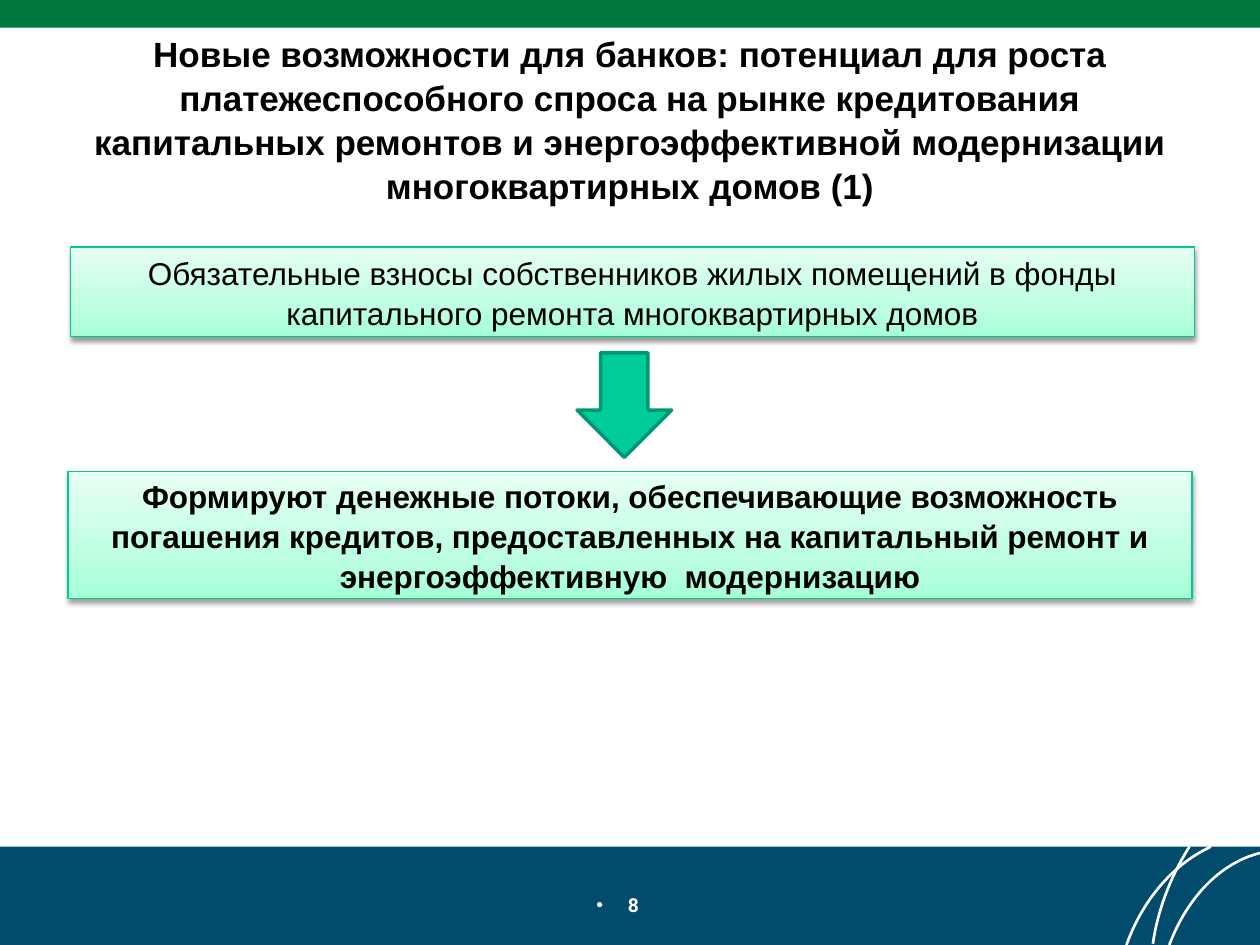
from copy import deepcopy
from dataclasses import dataclass

from lxml import etree
from pptx import Presentation, util as u
from pptx.dml.color import RGBColor
from pptx.enum import shapes, text
from pptx.oxml import ns

BLACK, WHITE = "000000", "FFFFFF"
GRADIENT = [(0, "A5FFD6"), (0.35, "BFFFE2"), (1, "E7FFF3")]
CURVE_STEPS = 24


@dataclass
class Box:
    left: float
    top: float
    height: float
    text: str
    bold: bool = False
    width: float = 8.92


@dataclass
class Arc:
    """Cubic curve given by its four control points, in inches."""
    points: list

    def at(self, t: float) -> tuple:
        weights = ((1 - t) ** 3, 3 * t * (1 - t) ** 2, 3 * t * t * (1 - t), t ** 3)
        return tuple(sum(w * p[i] for w, p in zip(weights, self.points)) for i in (0, 1))


BOXES = [
    Box(0.56, 1.96, 0.71, "Обязательные взносы собственников жилых помещений в фонды "
        "капитального ремонта многоквартирных домов"),
    Box(0.54, 3.74, 1.01, "Формируют денежные потоки, обеспечивающие возможность погашения "
        "кредитов, предоставленных на капитальный ремонт и "
        "энергоэффективную  модернизацию", bold=True),
]
ARCS = [
    Arc([(9.61, 6.72), (9.31, 6.86), (9.07, 7.14), (8.94, 7.5)]),
    Arc([(10, 6.77), (9.68, 6.85), (9.42, 7.13), (9.28, 7.5)]),
    Arc([(9.44, 6.72), (9.3, 6.94), (9.19, 7.21), (9.15, 7.49)]),
]


def rgb(value: str) -> RGBColor:
    return RGBColor.from_string(value)


def place(sp, *box: float) -> None:
    sp.left, sp.top, sp.width, sp.height = map(u.Inches, box)


def write(sp, words: str, size: float, color: str = BLACK, font: str = "Arial",
          bold: bool = False, spacing: float = 1.05, anchor=text.MSO_ANCHOR.MIDDLE):
    tf = sp.text_frame
    tf.word_wrap = True
    tf.auto_size = text.MSO_AUTO_SIZE.NONE
    tf.vertical_anchor = anchor
    p = tf.paragraphs[0]
    p.alignment = text.PP_ALIGN.CENTER
    p.line_spacing = spacing
    r = p.add_run()
    r.text = words
    r.font.name, r.font.size, r.font.bold = font, u.Pt(size), bold
    r.font.color.rgb = rgb(color)
    return p


def add_shape(slide, kind, box: tuple, fill: str = None, line: str = None, width: float = 1):
    sp = slide.shapes.add_shape(kind, *map(u.Inches, box))
    sp.shadow.inherit = False
    if fill:
        sp.fill.solid()
        sp.fill.fore_color.rgb = rgb(fill)
    if line:
        sp.line.color.rgb = rgb(line)
        sp.line.width = u.Pt(width)
    else:
        sp.line.fill.background()
    return sp


def add_arc(slide, arc: Arc) -> None:
    points = [tuple(map(u.Inches, arc.at(i / CURVE_STEPS))) for i in range(CURVE_STEPS + 1)]
    builder = slide.shapes.build_freeform(*points[0])
    builder.add_line_segments(points[1:], close=False)
    sp = builder.convert_to_shape()
    sp.shadow.inherit = False
    sp.fill.background()
    sp.line.color.rgb = rgb(WHITE)
    sp.line.width = u.Pt(1.5)


def add_box(slide, box: Box) -> None:
    sp = add_shape(slide, shapes.MSO_SHAPE.RECTANGLE,
                   (box.left, box.top, box.width, box.height), line="00C896", width=0.75)
    # Three-stop gradient, running from the bottom up
    sp.fill.gradient()
    sp.fill.gradient_angle = 90
    stops = sp._element.spPr.find(".//" + ns.qn("a:gsLst"))
    stops.append(deepcopy(stops[0]))
    for stop, (position, color) in zip(sp.fill.gradient_stops, GRADIENT):
        stop.position = position
        stop.color.rgb = rgb(color)
    # Soft shadow below
    effects = sp._element.spPr.find(ns.qn("a:effectLst"))
    shadow = etree.SubElement(effects, ns.qn("a:outerShdw"), blurRad=str(u.Pt(3.1)),
                              dist=str(u.Pt(1.6)), dir="5400000", rotWithShape="0")
    color = etree.SubElement(shadow, ns.qn("a:srgbClr"), val=BLACK)
    etree.SubElement(color, ns.qn("a:alpha"), val="38000")
    write(sp, box.text, 18, bold=box.bold)


def add_page_number(slide, number: str) -> None:
    sp = slide.shapes.add_textbox(*map(u.Inches, (3.97, 7.04, 2.06, 0.31)))
    p = write(sp, number, 11, WHITE, "Roboto", bold=True, spacing=1,
              anchor=text.MSO_ANCHOR.TOP)
    props = p._p.get_or_add_pPr()
    props.set("marL", "0")
    props.set("indent", str(-u.Inches(0.25)))
    etree.SubElement(props, ns.qn("a:buFont"), typeface="Arial")
    etree.SubElement(props, ns.qn("a:buChar"), char="•")


def main() -> None:
    prs = Presentation()
    prs.slide_width, prs.slide_height = u.Inches(10), u.Inches(7.5)
    slide = prs.slides.add_slide(prs.slide_layouts[5])

    # Footer with arcs, and top band
    rect = shapes.MSO_SHAPE.RECTANGLE
    add_shape(slide, rect, (0, 6.72, 10, 0.78), "014C6D")
    for arc in ARCS:
        add_arc(slide, arc)
    add_shape(slide, rect, (0, 0, 10, 0.22), "00783C")

    # Title
    title = slide.shapes.title
    place(title, 0.5, 0.44, 9, 1)
    write(title, "Новые возможности для банков: потенциал для роста платежеспособного "
          "спроса на рынке кредитования капитальных ремонтов и энергоэффективной "
          "модернизации многоквартирных домов (1)", 20, bold=True)

    # Cause, arrow, effect
    for box in BOXES:
        add_box(slide, box)
    add_shape(slide, shapes.MSO_SHAPE.DOWN_ARROW, (4.58, 2.8, 0.75, 0.83),
              "00CC99", "009771", 2)

    add_page_number(slide, "8")
    prs.save("out.pptx")


if __name__ == "__main__":
    main()
